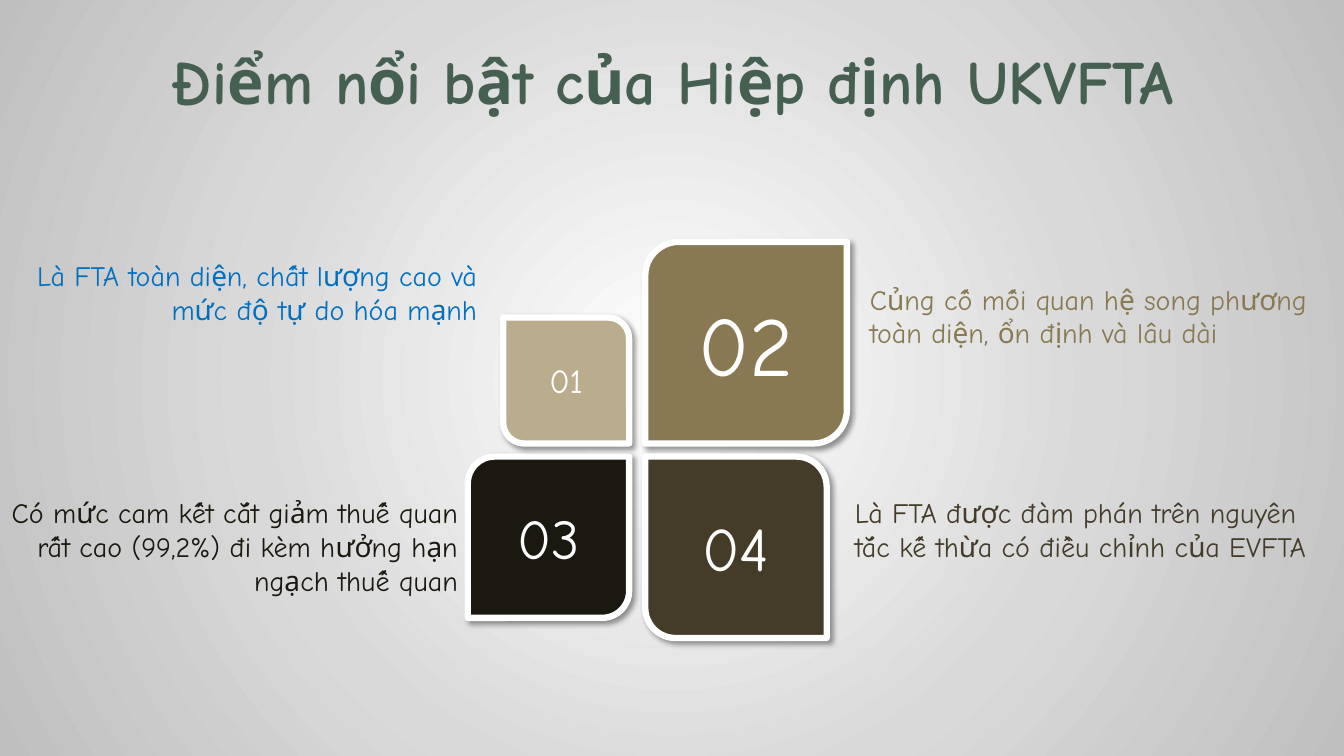
from lxml import etree
from pptx import Presentation
from pptx.dml.color import RGBColor
from pptx.enum.shapes import MSO_SHAPE as SHAPE
from pptx.enum.text import MSO_ANCHOR as ANCHOR, MSO_AUTO_SIZE as AUTO_SIZE, PP_ALIGN as ALIGN
from pptx.oxml import parse_xml
from pptx.util import Inches, Pt

FONT = "Comic Neue"
NAMESPACES = (
    'xmlns:a="http://schemas.openxmlformats.org/drawingml/2006/main" '
    'xmlns:p="http://schemas.openxmlformats.org/presentationml/2006/main"'
)
BACKGROUND = f"""<p:bg {NAMESPACES}><p:bgPr><a:gradFill rotWithShape="1"><a:gsLst>
<a:gs pos="0"><a:srgbClr val="FFFFFF"/></a:gs>
<a:gs pos="55000"><a:srgbClr val="D9D9D9"/></a:gs>
<a:gs pos="100000"><a:srgbClr val="BFBFBF"/></a:gs></a:gsLst>
<a:path path="circle"><a:fillToRect l="50000" t="50000" r="50000" b="50000"/></a:path>
</a:gradFill><a:effectLst/></p:bgPr></p:bg>"""
SHADOW = f"""<a:outerShdw {NAMESPACES} blurRad="{Pt(4)}" dist="{Pt(3)}" dir="2700000"
algn="tl" rotWithShape="0"><a:srgbClr val="000000"><a:alpha val="40000"/></a:srgbClr></a:outerShdw>"""


def rgb(value):
    return RGBColor.from_string(value)


def write(shape, lines, size, color, alignment, bold=False):
    """Fill the shape with one paragraph per line, all in the same format."""
    frame = shape.text_frame
    frame.word_wrap = True
    frame.text = lines
    for paragraph in frame.paragraphs:
        paragraph.alignment = alignment
        font = paragraph.runs[0].font
        font.name, font.size, font.bold = FONT, Pt(size), bold
        font.color.rgb = rgb(color)


presentation = Presentation()
presentation.slide_width = Inches(13.33)
presentation.slide_height = Inches(7.5)
slide = presentation.slides.add_slide(presentation.slide_layouts[5])
slide.element.cSld.insert(0, parse_xml(BACKGROUND))

title = slide.shapes.title
title.left, title.top = Inches(0.82), Inches(0.38)
title.width, title.height = Inches(11.7), Inches(0.84)
write(title, "Điểm nổi bật của Hiệp định UKVFTA", 44, "455F51", ALIGN.CENTER, bold=True)
title.text_frame.vertical_anchor = ANCHOR.TOP
title.text_frame.auto_size = AUTO_SIZE.NONE

# Petals meet around a centre gap: number, side, fill, font size, is left, is upper
LEFT_EDGE, RIGHT_EDGE = 6.24, 6.4
UPPER_EDGE, LOWER_EDGE = 4.4, 4.53
petals = [
    ("02", 2, "887952", 60, False, True),
    ("03", 1.6, "1B1810", 40, True, False),
    ("01", 1.25, "BAAD8D", 24, True, True),
    ("04", 1.8, "443C29", 44, False, False),
]
for number, side, color, size, is_left, is_upper in petals:
    left = LEFT_EDGE - side if is_left else RIGHT_EDGE
    top = UPPER_EDGE - side if is_upper else LOWER_EDGE
    petal = slide.shapes.add_shape(
        SHAPE.ROUND_2_DIAG_RECTANGLE, Inches(left), Inches(top), Inches(side), Inches(side)
    )
    # The round corners run along the other diagonal for 01 and 04
    if is_left == is_upper:
        petal.adjustments[0], petal.adjustments[1] = 0, 0.16667
    petal.fill.solid()
    petal.fill.fore_color.rgb = rgb(color)
    petal.line.color.rgb = rgb("FFFFFF")
    petal.line.width = Pt(4.5)
    petal.shadow.inherit = False
    effects = petal.element.spPr.find("{*}effectLst")
    effects.append(etree.fromstring(SHADOW))
    write(petal, number, size, "FFFFFF", ALIGN.CENTER)
    petal.text_frame.vertical_anchor = ANCHOR.MIDDLE

captions = [
    ("Là FTA toàn diện, chất lượng cao và mức độ tự do hóa mạnh",
     0.25, 2.52, 4.58, 0.77, "0070C0", ALIGN.RIGHT),
    ("Củng cố mối quan hệ song phương\ntoàn diện, ổn định và lâu dài",
     8.53, 2.75, 4.8, 0.77, "887952", ALIGN.LEFT),
    ("Có mức cam kết cắt giảm thuế quan rất cao (99,2%) đi kèm hưởng hạn ngạch thuế quan",
     -0.16, 4.87, 4.8, 1.11, "1B1810", ALIGN.RIGHT),
    ("Là FTA được đàm phán trên nguyên tắc kế thừa có điều chỉnh của EVFTA",
     8.38, 4.87, 4.8, 0.77, "443C29", ALIGN.LEFT),
]
for text, left, top, width, height, color, alignment in captions:
    caption = slide.shapes.add_textbox(Inches(left), Inches(top), Inches(width), Inches(height))
    write(caption, text, 20, color, alignment)
    caption.text_frame.auto_size = AUTO_SIZE.SHAPE_TO_FIT_TEXT

presentation.save("out.pptx")
